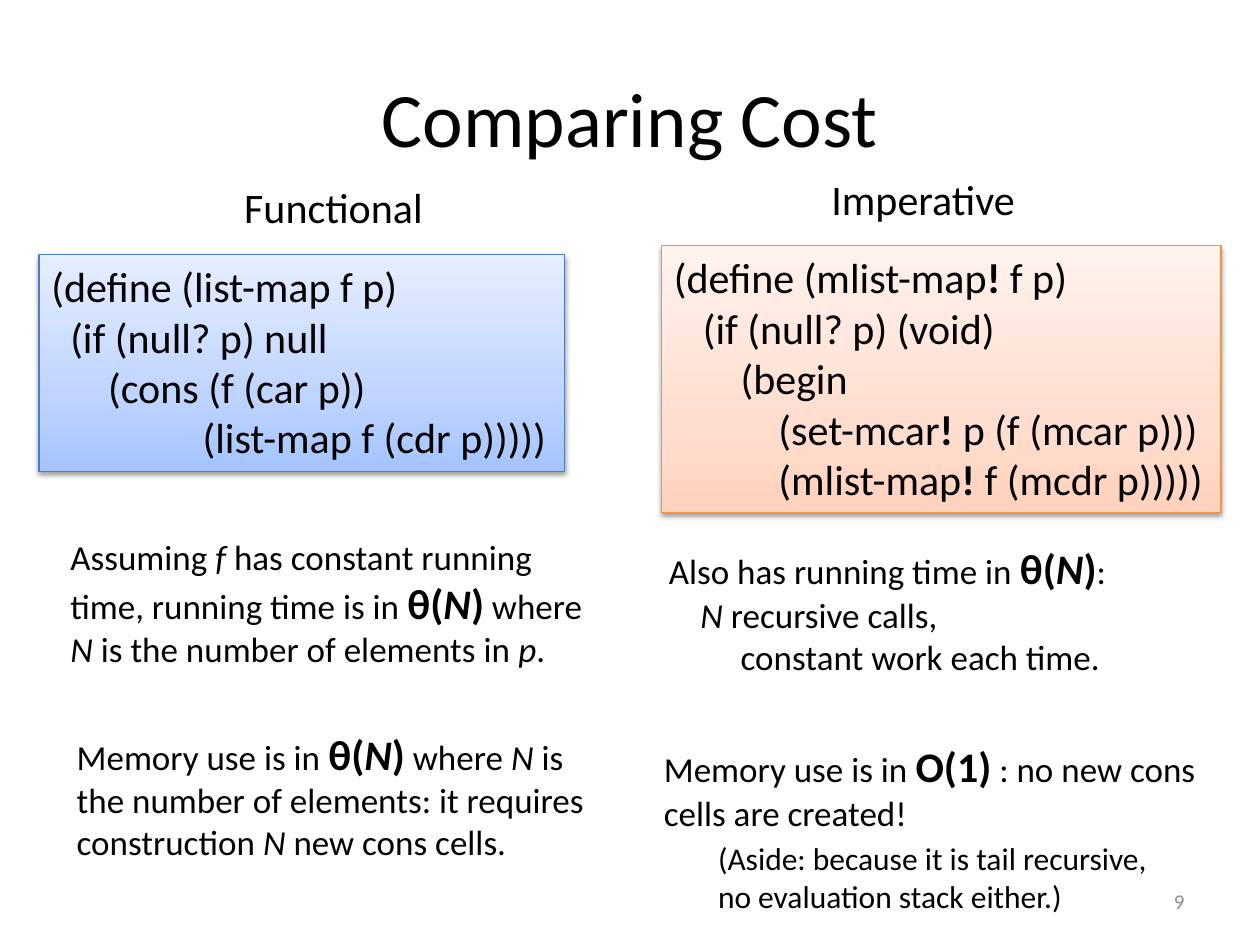
import pptx
import pptx.util
import pptx.dml.color
import pptx.enum.shapes
import pptx.enum.text
import pptx.oxml
import pptx.oxml.ns

Inches = pptx.util.Inches
RGBColor = pptx.dml.color.RGBColor
ALIGN = pptx.enum.text.PP_ALIGN
ANCHOR = pptx.enum.text.MSO_ANCHOR
AUTO_SIZE = pptx.enum.text.MSO_AUTO_SIZE

FONT = "Calibri"
BLACK = RGBColor(0x00, 0x00, 0x00)
GRAY = RGBColor(0x8C, 0x8C, 0x8C)
BLUE_LINE = RGBColor(0x4B, 0x7E, 0xBC)
ORANGE_LINE = RGBColor(0xF6, 0x92, 0x40)
BLUE_STOPS = [
    (0, RGBColor(0xA4, 0xC4, 0xFF)),
    (35, RGBColor(0xBF, 0xD4, 0xFF)),
    (100, RGBColor(0xE6, 0xEE, 0xFF)),
]
ORANGE_STOPS = [
    (0, RGBColor(0xFF, 0xD2, 0xBD)),
    (35, RGBColor(0xFF, 0xDE, 0xD0)),
    (100, RGBColor(0xFF, 0xF2, 0xED)),
]

# Run styles that differ from the base format of a text
BOLD = {"bold": True}
ITALIC = {"italic": True}
LARGE = {"bold": True, "size": pptx.util.Pt(24)}
LARGE_ITALIC = {**LARGE, "italic": True}
THETA_N = [("θ(", LARGE), ("N", LARGE_ITALIC), (")", LARGE)]


def write_text(frame, paragraphs, size, color=BLACK, align=ALIGN.LEFT):
    """Each paragraph is (indent in inches, list of (text, style))."""
    base = {"name": FONT, "size": pptx.util.Pt(size), "bold": False, "italic": False}
    for index, (indent, runs) in enumerate(paragraphs):
        paragraph = frame.add_paragraph() if index else frame.paragraphs[0]
        paragraph.alignment = align
        if indent:
            properties = paragraph._p.get_or_add_pPr()
            properties.set("marL", str(Inches(indent)))
            properties.set("indent", "0")
        for text, style in runs:
            run = paragraph.add_run()
            run.text = text
            for attribute, value in {**base, **style}.items():
                setattr(run.font, attribute, value)
            run.font.color.rgb = color


def add_text(slide, box, paragraphs, size, wrap=True, anchor=ANCHOR.TOP, **style):
    shape = slide.shapes.add_textbox(*map(Inches, box))
    frame = shape.text_frame
    frame.word_wrap = wrap
    frame.vertical_anchor = anchor
    write_text(frame, paragraphs, size, **style)


def add_code_box(slide, box, stops, line_color, paragraphs):
    rectangle = pptx.enum.shapes.MSO_SHAPE.RECTANGLE
    shape = slide.shapes.add_shape(rectangle, *map(Inches, box))
    namespace = pptx.oxml.ns.nsdecls("a")

    # Gradient running from bottom to top
    shape.fill.gradient()
    shape.fill.gradient_angle = 90
    stop_list = shape._element.spPr.find(".//" + pptx.oxml.ns.qn("a:gsLst"))
    for stop in list(stop_list):
        stop_list.remove(stop)
    for position, color in stops:
        stop_list.append(pptx.oxml.parse_xml(
            f'<a:gs {namespace} pos="{position * 1000}"><a:srgbClr val="{color}"/></a:gs>'))
    shape.line.color.rgb = line_color
    shape.line.width = pptx.util.Pt(0.75)

    # Soft shadow below the box
    shape.shadow.inherit = False
    effects = shape._element.spPr.find(pptx.oxml.ns.qn("a:effectLst"))
    effects.append(pptx.oxml.parse_xml(
        f'<a:outerShdw {namespace} blurRad="{pptx.util.Pt(3.1)}" dist="{pptx.util.Pt(1.6)}"'
        ' dir="5400000" rotWithShape="0"><a:srgbClr val="000000">'
        '<a:alpha val="38000"/></a:srgbClr></a:outerShdw>'))

    frame = shape.text_frame
    frame.word_wrap = False
    frame.auto_size = AUTO_SIZE.SHAPE_TO_FIT_TEXT
    frame.vertical_anchor = ANCHOR.TOP
    write_text(frame, paragraphs, 24)


def add_title(slide, text):
    title = slide.shapes.title
    title.left, title.top, title.width, title.height = map(Inches, (0.5, 0.3, 9, 1.25))
    title.text_frame.vertical_anchor = ANCHOR.MIDDLE
    write_text(title.text_frame, [(0, [(text, {})])], 44, align=ALIGN.CENTER)


def main():
    presentation = pptx.Presentation()
    presentation.slide_width = Inches(10)
    presentation.slide_height = Inches(7.5)
    slide = presentation.slides.add_slide(presentation.slide_layouts[5])

    # Title and page number
    add_title(slide, "Comparing Cost")
    add_text(slide, (7.17, 6.95, 2.33, 0.4), [(0, [("9", {})])], 12,
             anchor=ANCHOR.MIDDLE, color=GRAY, align=ALIGN.RIGHT)

    # Code of the two versions
    add_code_box(slide, (0.31, 2.02, 4.17, 1.72), BLUE_STOPS, BLUE_LINE, [
        (0, [("(define (list-map f p)", {})]),
        (0.15, [("(if (null? p) null", {})]),
        (0.45, [("(cons (f (car p))", {})]),
        (1.2, [("(list-map f (cdr p)))))", {})]),
    ])
    add_code_box(slide, (5.25, 1.95, 4.44, 2.12), ORANGE_STOPS, ORANGE_LINE, [
        (0, [("(define (mlist-map", {}), ("! ", BOLD), ("f p)", {})]),
        (0.23, [("(if (null? p) (void)", {})]),
        (0.53, [("(begin", {})]),
        (0.83, [("(set-mcar", {}), ("! ", BOLD), ("p (f (mcar p)))", {})]),
        (0.83, [("(mlist-map", {}), ("!", BOLD), (" f (mcdr p)))))", {})]),
    ])

    # Column headings
    for text, box in [("Functional", (1.84, 1.39, 1.63, 0.5)),
                      ("Imperative", (6.5, 1.33, 1.68, 0.5))]:
        add_text(slide, box, [(0, [(text, {})])], 24, wrap=False)

    # Running time
    add_text(slide, (0.46, 4.2, 4.42, 1.18), [
        (0, [("Assuming ", {}), ("f", ITALIC),
             (" has constant running time, running time is in ", {}), *THETA_N,
             (" where ", {}), ("N", ITALIC), (" is the number of elements in ", {}),
             ("p", ITALIC), (".", {})]),
    ], 20)
    add_text(slide, (5.21, 4.26, 4.42, 1.18), [
        (0, [("Also has running time in ", {}), *THETA_N, (":", {})]),
        (0.25, [("N", ITALIC), (" recursive calls,", {})]),
        (0.57, [("constant work each time.", {})]),
    ], 20)

    # Memory use
    add_text(slide, (0.51, 5.73, 4.42, 1.18), [
        (0, [("Memory use is in ", {}), *THETA_N, (" where ", {}), ("N", ITALIC),
             (" is the number of elements: it requires construction ", {}),
             ("N", ITALIC), (" new cons cells.", {})]),
    ], 20)
    add_text(slide, (5.17, 5.83, 4.42, 0.84), [
        (0, [("Memory use is in ", {}), ("O(1)", LARGE),
             (" : no new cons cells are created!", {})]),
    ], 20)
    add_text(slide, (5.6, 6.61, 3.65, 0.71), [
        (0, [("(Aside: because it is tail recursive,", {})]),
        (0, [("no evaluation stack either.)", {})]),
    ], 18, wrap=False)

    presentation.save("out.pptx")


if __name__ == "__main__":
    main()
